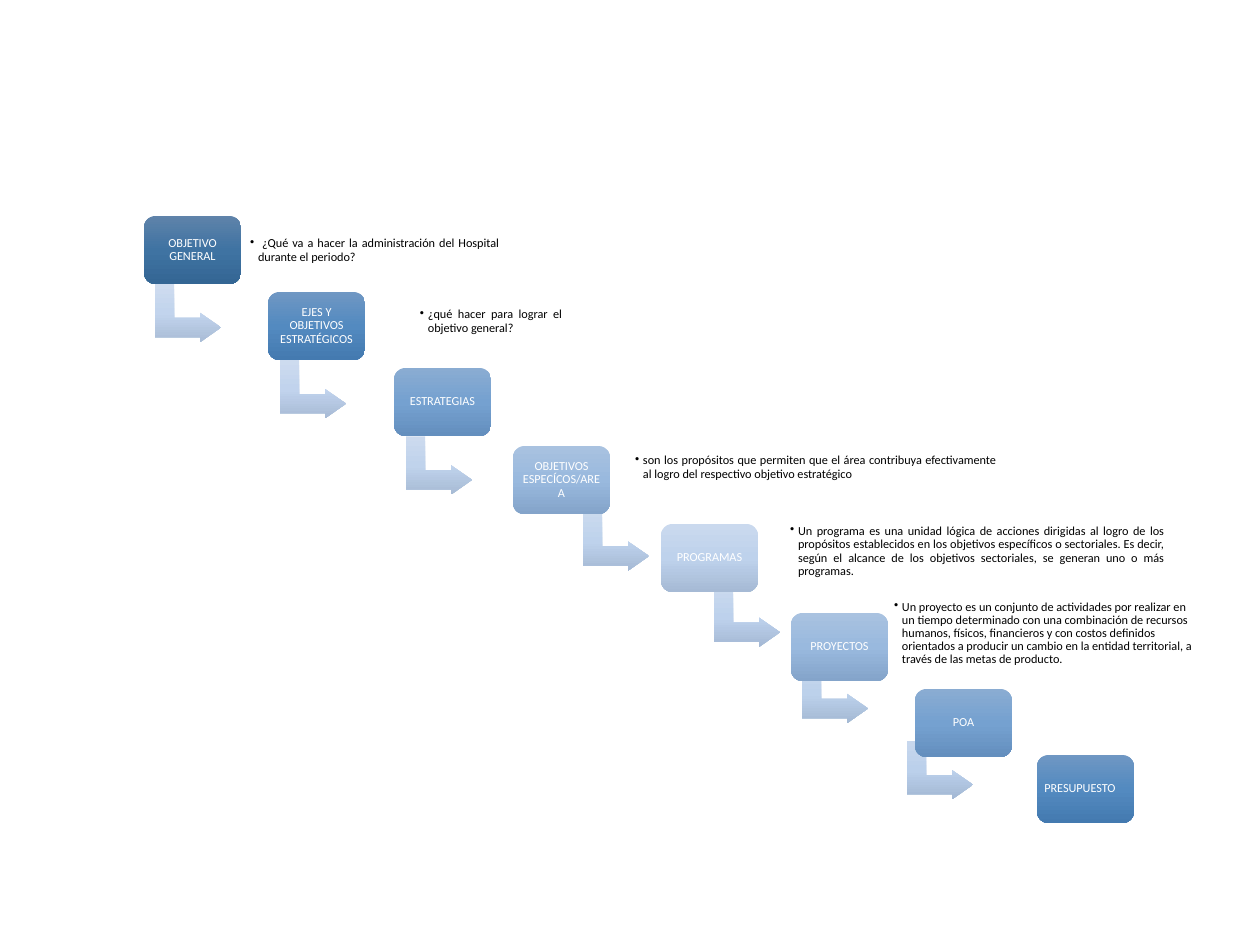
from dataclasses import dataclass
from typing import NamedTuple, Optional

from lxml import etree
from pptx import Presentation
from pptx.dml.color import RGBColor
from pptx.enum.shapes import MSO_SHAPE
from pptx.enum.text import MSO_ANCHOR, PP_ALIGN
from pptx.oxml import parse_xml
from pptx.oxml.ns import nsdecls, qn
from pptx.util import Emu, Pt

ROUND_BOX = MSO_SHAPE.ROUNDED_RECTANGLE
BENT_ARROW = MSO_SHAPE.BENT_UP_ARROW
MIDDLE = MSO_ANCHOR.MIDDLE
LEFT, CENTER, JUSTIFY = PP_ALIGN.LEFT, PP_ALIGN.CENTER, PP_ALIGN.JUSTIFY

EMU_PER_PX = 914400 / 126
SLIDE_W, SLIDE_H = 1260, 945
BOX_W, BOX_H = 97, 68
ARROW_W, ARROW_H = 58, 66
ARROW_TOP, ARROW_PITCH = 280, 76.2
NOTE_H = 55
INSET = 4
BULLET_INDENT = 8

Gradient = tuple[str, str, str]


@dataclass(frozen=True)
class Theme:
    font: str = "Calibri"
    size: int = 7
    line_spacing: float = 0.9
    box_text: str = "FFFFFF"
    note_text: str = "000000"
    # Box shades, from darkest to lightest
    shades: tuple[Gradient, ...] = (
        ("5F83AA", "3F73A2", "346694"),
        ("6F97C3", "538AC0", "447AB0"),
        ("8AACD2", "75A1D0", "648FBE"),
        ("A9C2E0", "99B9DE", "84A4CA"),
        ("CAD9EE", "BED2EC", "A6BAD5"),
    )
    first_arrow: Gradient = ("CEDCEF", "C2D4ED", "A9BCD6")
    last_arrow: Gradient = ("C7D7ED", "BBD0EB", "A3B8D4")


THEME = Theme()


class Note(NamedTuple):
    left: int
    top: int
    width: int
    text: str
    align: PP_ALIGN = JUSTIFY


class Step(NamedTuple):
    label: str
    left: int
    top: int
    shade: int
    arrow_left: Optional[int] = None
    note: Optional[Note] = None
    align: PP_ALIGN = CENTER


STEPS = (
    Step("OBJETIVO GENERAL", 144, 216, 0, 159, Note(
        246, 223, 257,
        " ¿Qué va a hacer la administración del Hospital durante el periodo?")),
    Step("EJES Y OBJETIVOS ESTRATÉGICOS", 268, 292, 1, 284, Note(
        416, 294, 150, "¿qué hacer para lograr el objetivo general?")),
    Step("ESTRATEGIAS", 394, 368, 2, 410),
    Step("OBJETIVOS ESPECÍCOS/AREA", 513, 446, 3, 587, Note(
        631, 440, 369,
        "son los propósitos que permiten que el área contribuya efectivamente "
        "al logro del respectivo objetivo estratégico")),
    Step("PROGRAMAS", 661, 524, 4, 718, Note(
        786, 524, 382,
        "Un programa es una unidad lógica de acciones dirigidas al logro de los "
        "propósitos establecidos en los objetivos específicos o sectoriales. Es "
        "decir, según el alcance de los objetivos sectoriales, se generan uno o "
        "más programas.")),
    Step("PROYECTOS", 791, 613, 3, 806, Note(
        890, 606, 306,
        "Un proyecto es un conjunto de actividades por realizar en un tiempo "
        "determinado con una combinación de recursos humanos, físicos, "
        "financieros y con costos definidos orientados a producir un cambio en "
        "la entidad territorial, a través de las metas de producto.", LEFT)),
    Step("POA", 915, 689, 2, 911),
    Step("PRESUPUESTO", 1037, 755, 1, align=JUSTIFY),
)


def px(value: float) -> Emu:
    return Emu(round(value * EMU_PER_PX))


def blend(start: str, end: str, share: float) -> str:
    """Return the colour that lies at the given share between two colours."""
    pairs = zip(RGBColor.from_string(start), RGBColor.from_string(end))
    return str(RGBColor(*(round(a + (b - a) * share) for a, b in pairs)))


def fill_gradient(shape, colors: Gradient) -> None:
    """Fill from top to bottom, whatever the rotation, without line or shadow."""
    stops = "".join(
        f'<a:gs pos="{i * 50000}"><a:srgbClr val="{color}"/></a:gs>'
        for i, color in enumerate(colors))
    gradient = parse_xml(
        f'<a:gradFill {nsdecls("a")} rotWithShape="0"><a:gsLst>{stops}</a:gsLst>'
        '<a:lin ang="5400000" scaled="0"/></a:gradFill>')
    shape._element.spPr.find(qn("a:prstGeom")).addnext(gradient)
    shape.line.fill.background()
    shape.shadow.inherit = False


def write_text(shape, text: str, color: str, align: PP_ALIGN,
               bullet: bool = False) -> None:
    frame = shape.text_frame
    frame_format = {"word_wrap": True, "vertical_anchor": MIDDLE}
    frame_format |= {f"margin_{side}": px(INSET)
                     for side in ("left", "right", "top", "bottom")}
    for name, value in frame_format.items():
        setattr(frame, name, value)

    paragraph = frame.paragraphs[0]
    paragraph.alignment = align
    paragraph.line_spacing = THEME.line_spacing
    if bullet:
        paragraph.level = 1
        properties = paragraph._p.get_or_add_pPr()
        properties.set("marL", str(px(BULLET_INDENT)))
        properties.set("indent", str(-px(BULLET_INDENT)))
        etree.SubElement(properties, qn("a:buChar"), char="•")

    run = paragraph.add_run()
    run.text = text
    for name, value in {"name": THEME.font, "size": Pt(THEME.size)}.items():
        setattr(run.font, name, value)
    run.font.color.rgb = RGBColor.from_string(color)


def draw_arrow(shapes, left: int, index: int) -> None:
    top = ARROW_TOP + index * ARROW_PITCH
    arrow = shapes.add_shape(
        BENT_ARROW, px(left), px(top), px(ARROW_W), px(ARROW_H))
    arrow.rotation = 90
    for i, value in enumerate((0.33, 0.25, 0.36)):
        arrow.adjustments[i] = value
    share = index / (len(STEPS) - 2)
    fill_gradient(arrow, tuple(
        blend(start, end, share)
        for start, end in zip(THEME.first_arrow, THEME.last_arrow)))


def draw_box(shapes, step: Step) -> None:
    box = shapes.add_shape(
        ROUND_BOX, px(step.left), px(step.top), px(BOX_W), px(BOX_H))
    fill_gradient(box, THEME.shades[step.shade])
    write_text(box, step.label, THEME.box_text, step.align)


def draw_note(shapes, note: Note) -> None:
    box = shapes.add_textbox(
        px(note.left), px(note.top), px(note.width), px(NOTE_H))
    write_text(box, note.text, THEME.note_text, note.align, bullet=True)


def main() -> None:
    deck = Presentation()
    deck.slide_width, deck.slide_height = px(SLIDE_W), px(SLIDE_H)
    blank_layout = deck.slide_layouts[6]
    shapes = deck.slides.add_slide(blank_layout).shapes
    for index, step in enumerate(STEPS):
        if step.arrow_left is not None:
            draw_arrow(shapes, step.arrow_left, index)
        draw_box(shapes, step)
        if step.note:
            draw_note(shapes, step.note)
    deck.save("out.pptx")


if __name__ == "__main__":
    main()
